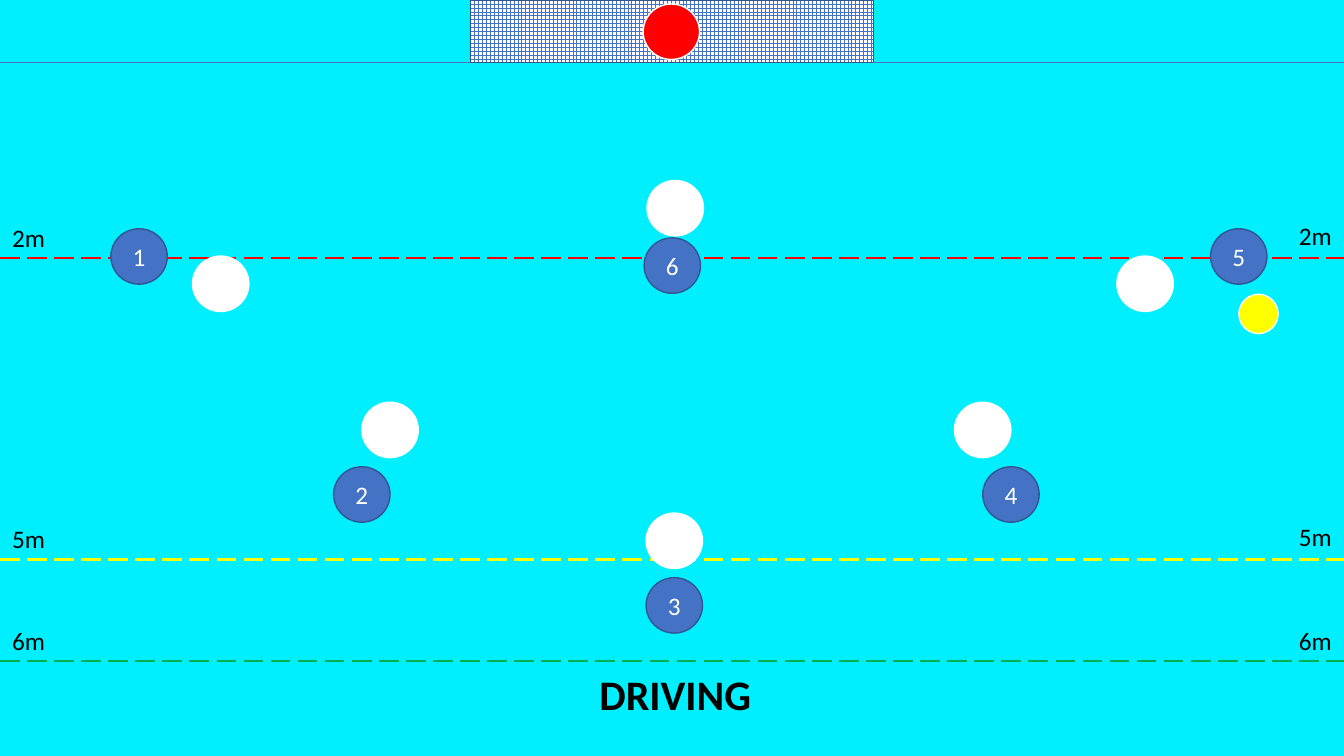
from pptx import Presentation
from pptx import util as u
from pptx.dml import color as c
from pptx.enum import dml, shapes, text
from pptx.oxml import ns
from lxml import etree

COLORS = {
    "water": "00EFFE",
    "blue": "4472C4",
    "navy": "325491",
    "white": "FFFFFF",
    "black": "000000",
    "red": "FF0000",
    "yellow": "FFFF00",
    "green": "00B050",
}
FONT = "Calibri"
PLAYER_SIZE = (40.3, 39.6)
LABEL_SIZE = (41, 28.8)
BALL_SIZE = (28.1, 28.1)
GOAL_LINE = 44.6

DISTANCE_LINES = [
    ("2m", 184.3, "red", 155.5, 154.1),
    ("5m", 399.6, "yellow", 370.1, 368.6),
    ("6m", 472.3, "green", 442.8, 442.8),
]
ATTACKERS = [
    ("1", 79.2, 163.4),
    ("2", 238.3, 333.4),
    ("3", 461.5, 412.6),
    ("4", 702, 333.4),
    ("5", 864.7, 163.4),
    ("6", 460.1, 169.9),
]
DEFENDERS = [
    (137.5, 182.9),
    (258.5, 287.3),
    (461.5, 366.5),
    (681.8, 287.3),
    (797.8, 182.9),
    (462.2, 128.9),
]


def rgb(name):
    return c.RGBColor.from_string(COLORS[name])


def points(box):
    return [u.Pt(length) for length in box]


def write(text_frame, words, size, color, bold=False):
    text_frame.text = words
    paragraph = text_frame.paragraphs[0]
    paragraph.alignment = text.PP_ALIGN.CENTER
    for run in paragraph.runs:
        run.font.name = FONT
        run.font.size = u.Pt(size)
        run.font.bold = bold
        run.font.color.rgb = rgb(color)


def add_label(slide, box, words, size=18, bold=False):
    label = slide.shapes.add_textbox(*points(box))
    label.text_frame.word_wrap = True
    write(label.text_frame, words, size, "black", bold)


def add_line(slide, box, y, color, width, dash=None):
    left, top, across, _ = box
    line = slide.shapes.add_connector(
        shapes.MSO_CONNECTOR.STRAIGHT,
        *points((left, top + y, left + across, top + y)))
    line.line.color.rgb = rgb(color)
    line.line.width = u.Pt(width)
    if dash:
        line.line.dash_style = dash
    etree.SubElement(line._element.spPr, ns.qn("a:effectLst"))


def add_outlined(slide, kind, box, outline):
    shape = slide.shapes.add_shape(kind, *points(box))
    shape.shadow.inherit = False
    shape.line.color.rgb = rgb(outline)
    shape.line.width = u.Pt(1)
    return shape


def add_disc(slide, box, fill, outline="white", number=None):
    disc = add_outlined(slide, shapes.MSO_SHAPE.OVAL, box, outline)
    disc.fill.solid()
    disc.fill.fore_color.rgb = rgb(fill)
    if number:
        disc.text_frame.vertical_anchor = text.MSO_ANCHOR.MIDDLE
        write(disc.text_frame, number, 18, "white")


def add_pool(slide, box):
    left, top, width, _ = box
    add_line(slide, box, GOAL_LINE, "blue", 0.5)
    label_width = LABEL_SIZE[0]
    for distance, y, color, left_top, right_top in DISTANCE_LINES:
        add_line(slide, box, y, color, 1.75, dml.MSO_LINE.LONG_DASH)
        add_label(slide, (left, top + left_top, *LABEL_SIZE), distance)
        add_label(slide, (left + width - label_width, top + right_top, *LABEL_SIZE),
                  distance)


def add_goal(slide, box):
    left, top, _, _ = box
    goal = add_outlined(slide, shapes.MSO_SHAPE.RECTANGLE, box, "navy")
    goal.fill.patterned()
    goal.fill.pattern = dml.MSO_PATTERN.LARGE_GRID
    goal.fill.fore_color.rgb = rgb("blue")
    goal.fill.back_color.rgb = rgb("white")
    add_disc(slide, (left + 123.2, top + 2.9, *PLAYER_SIZE), "red")


def add_players(slide, box):
    left, top, _, _ = box
    for number, x, y in ATTACKERS:
        add_disc(slide, (left + x, top + y, *PLAYER_SIZE), "blue", "navy", number)
    for x, y in DEFENDERS:
        add_disc(slide, (left + x, top + y, *PLAYER_SIZE), "white")
    add_disc(slide, (left + 884.9, top + 210.2, *BALL_SIZE), "yellow")


def build_drill_slide(presentation, box):
    slide = presentation.slides.add_slide(presentation.slide_layouts[6])
    slide.background.fill.solid()
    slide.background.fill.fore_color.rgb = rgb("water")
    left, top, _, _ = box
    add_pool(slide, box)
    add_goal(slide, (left + 336.2, top, 288, GOAL_LINE))
    add_players(slide, box)
    add_label(slide, (left + 201.6, top + 473.8, 561.6, 43.9), "DRIVING", 30, True)


def main():
    presentation = Presentation()
    presentation.slide_width = u.Pt(960)
    presentation.slide_height = u.Pt(540)
    build_drill_slide(presentation, (0, 0, 960, 540))
    presentation.save("out.pptx")


if __name__ == "__main__":
    main()
